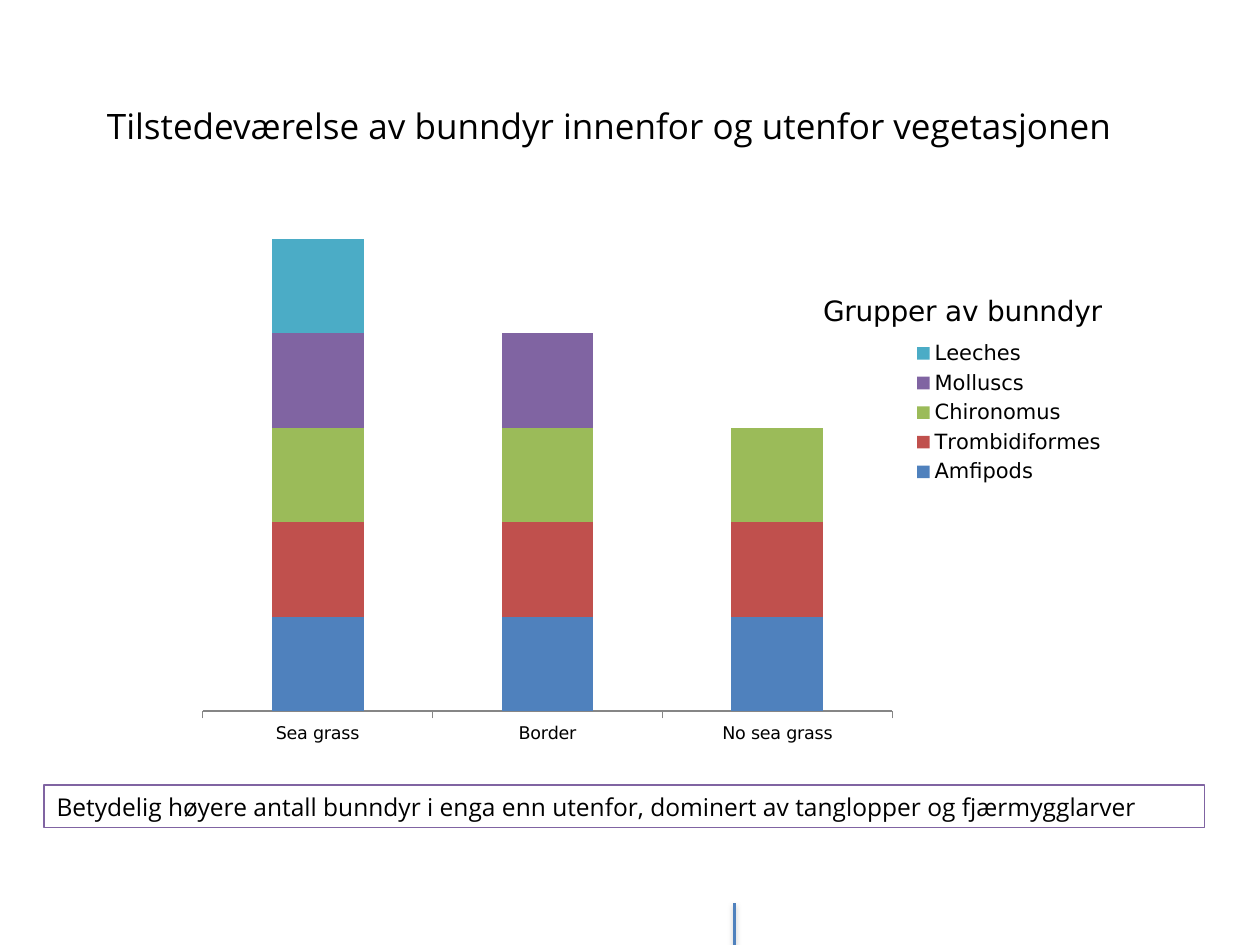
from lxml import etree
from pptx import Presentation
from pptx import util as u
from pptx.chart.data import CategoryChartData
from pptx.dml.color import RGBColor
from pptx.enum import chart as ch, shapes, text
from pptx.oxml import parse_xml
from pptx.oxml.ns import qn, nsdecls


class Theme:
    ink = "000000"
    blue, red, green, violet, teal = "4F81BD", "C0504D", "9BBB59", "8064A2", "4BACC6"
    grey = "868686"
    shade = "808080"
    font, label = "Open Sans", "DejaVu Sans"
    head, note, title, key, axis = 20, 14, 16, 12, 10


def rgb(code):
    return RGBColor.from_string(code)


class Page:
    def __init__(self, deck, theme):
        self.theme = theme
        self.slide = deck.slides.add_slide(deck.slide_layouts[6])

    def style(self, font, size, name):
        font.size, font.name, font.bold = u.Pt(size), name, False
        font.color.rgb = rgb(self.theme.ink)

    def fill_text(self, shape, words, size, wrap):
        frame = shape.text_frame
        frame.text = words
        frame.word_wrap = wrap
        frame.auto_size = text.MSO_AUTO_SIZE.SHAPE_TO_FIT_TEXT
        para = frame.paragraphs[0]
        para.alignment = text.PP_ALIGN.LEFT
        self.style(para.runs[0].font, size, self.theme.font)

    def label(self, box, words, size):
        shape = self.slide.shapes.add_textbox(*map(u.Inches, box))
        self.fill_text(shape, words, size, False)

    def frame(self, box, words, size, color):
        shape = self.slide.shapes.add_shape(
            shapes.MSO_SHAPE.RECTANGLE, *map(u.Inches, box))
        shape.shadow.inherit = False
        shape.fill.background()
        shape.line.color.rgb = rgb(color)
        shape.line.width = u.Pt(0.75)
        self.fill_text(shape, words, size, True)

    def line(self, ends, color, width):
        line = self.slide.shapes.add_connector(
            shapes.MSO_CONNECTOR.STRAIGHT, *map(u.Inches, ends))
        line.line.color.rgb = rgb(color)
        line.line.width = u.Pt(width)
        # Soft shadow straight below
        line._element.spPr.append(parse_xml(
            f'<a:effectLst {nsdecls("a")}><a:outerShdw blurRad="{u.Pt(3.1)}" '
            f'dist="{u.Pt(1.6)}" dir="5400000" rotWithShape="0">'
            f'<a:srgbClr val="{self.theme.shade}"><a:alpha val="38000"/></a:srgbClr>'
            '</a:outerShdw></a:effectLst>'))

    def place(self, node, index, inner=False, **spots):
        """Give a chart part a fixed place, in shares of the chart."""
        for old in node.findall(qn("c:layout")):
            node.remove(old)
        layout = etree.Element(qn("c:layout"))
        manual = etree.SubElement(layout, qn("c:manualLayout"))
        if inner:
            etree.SubElement(manual, qn("c:layoutTarget"), val="inner")
        for key in ("x", "y"):
            etree.SubElement(manual, qn(f"c:{key}Mode"), val="edge")
        for key, share in spots.items():
            etree.SubElement(manual, qn(f"c:{key}"), val=str(share))
        node.insert(index, layout)

    def stack(self, box, title, cats, rows):
        look = self.theme
        data = CategoryChartData()
        data.categories = cats
        for name, vals, _ in rows:
            data.add_series(name, vals)
        chart = self.slide.shapes.add_chart(
            ch.XL_CHART_TYPE.COLUMN_STACKED, *map(u.Inches, box), data).chart
        self.style(chart.font, look.axis, look.label)

        # Bars
        plot = chart.plots[0]
        plot.gap_width, plot.overlap, plot.vary_by_categories = 150, 100, False
        for bar, (_, _, color) in zip(plot.series, rows):
            bar.format.fill.solid()
            bar.format.fill.fore_color.rgb = rgb(color)

        # Axes
        chart.category_axis.format.line.color.rgb = rgb(look.grey)
        chart.category_axis.major_tick_mark = ch.XL_TICK_MARK.OUTSIDE
        axis = chart.value_axis
        axis.minimum_scale, axis.maximum_scale = 0, 500
        axis.has_major_gridlines = False
        axis.major_tick_mark = ch.XL_TICK_MARK.NONE
        axis.tick_label_position = ch.XL_TICK_LABEL_POSITION.NONE
        axis.format.line.fill.background()

        # Title and legend
        chart.has_title = True
        head = chart.chart_title
        head.text_frame.text = title
        self.style(head.text_frame.paragraphs[0].runs[0].font, look.title, look.label)
        chart.has_legend = True
        key = chart.legend
        key.position = ch.XL_LEGEND_POSITION.RIGHT
        key.include_in_layout = False
        self.style(key.font, look.key, look.label)

        # Fixed places
        self.place(chart._chartSpace.chart.plotArea, 0, True, x=0.02, y=0.25, w=0.74, h=0.68)
        self.place(head._element, 1, x=0.68, y=0.32)
        self.place(key._element, 1, x=0.78, y=0.39, w=0.21, h=0.22)


def main():
    deck = Presentation()
    deck.slide_width, deck.slide_height = u.Inches(10), u.Inches(7.5)
    look = Theme()
    page = Page(deck, look)

    # Footer mark
    page.line((5.83, 7.17, 5.83, 7.5), look.blue, 2)

    # Animal groups by zone
    page.stack((1.46, 0.52, 7.4, 5.51), "Grupper av bunndyr",
               ("Sea grass", "Border", "No sea grass"),
               (("Amfipods", (100, 100, 100), look.blue),
                ("Trombidiformes", (100, 100, 100), look.red),
                ("Chironomus", (100, 100, 100), look.green),
                ("Molluscs", (100, 100, None), look.violet),
                ("Leeches", (100, None, None), look.teal)))

    # Heading and finding
    page.label((0.75, 0.78, 8.58, 0.44),
               "Tilstedeværelse av bunndyr innenfor og utenfor vegetasjonen", look.head)
    page.frame((0.35, 6.23, 9.21, 0.34),
               "Betydelig høyere antall bunndyr i enga enn utenfor, "
               "dominert av tanglopper og fjærmygglarver", look.note, look.violet)

    deck.save("out.pptx")


if __name__ == "__main__":
    main()
